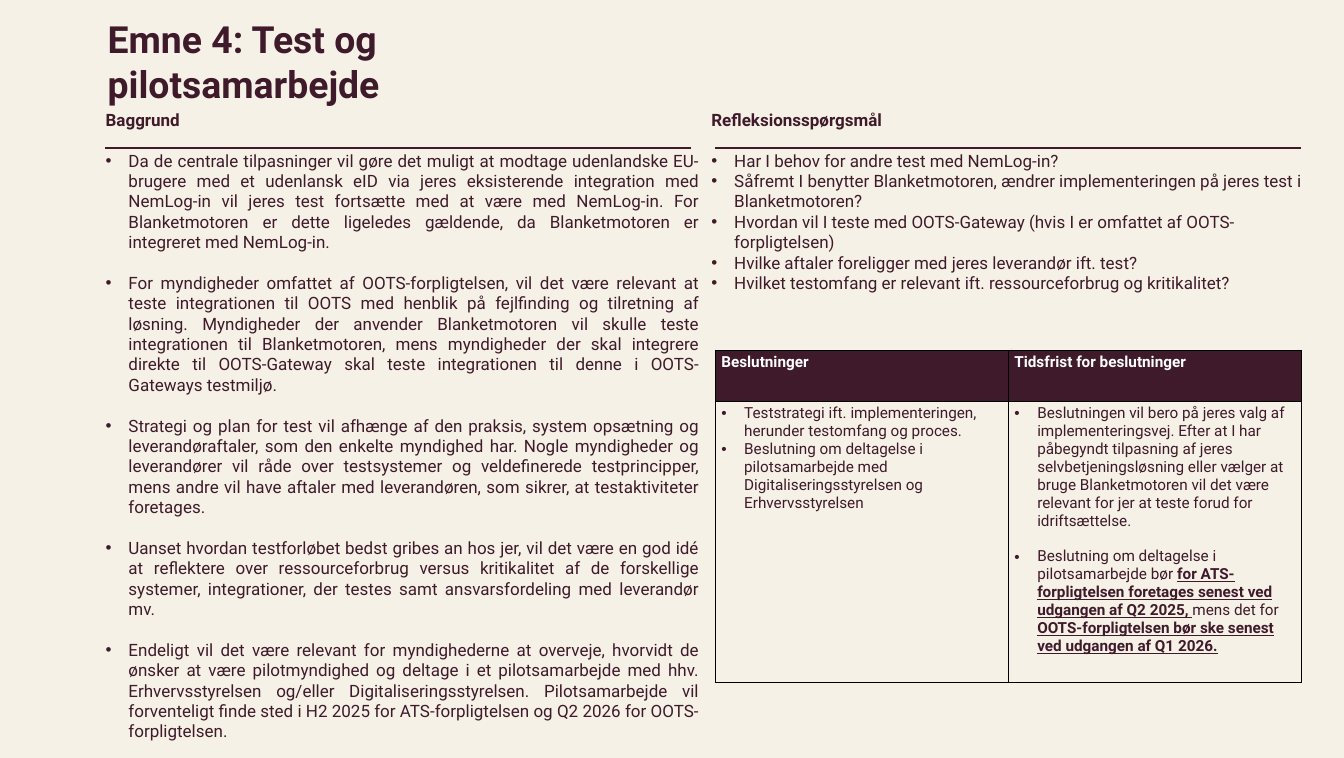
from lxml.etree import SubElement
from pptx import Presentation
from pptx.dml.color import RGBColor
from pptx.enum.shapes import MSO_CONNECTOR as Connector
from pptx.enum.text import MSO_ANCHOR as Anchor, MSO_AUTO_SIZE as AutoSize, PP_ALIGN as Align
from pptx.oxml.ns import qn
from pptx.util import Cm, Pt

COLORS = {"plum": "3F1A2B", "cream": "F5F1E6", "white": "FFFFFF", "black": "000000"}
TITLE = "Emne 4: Test og pilotsamarbejde"
BACKGROUND = [
    "Da de centrale tilpasninger vil gøre det muligt at modtage udenlandske EU-brugere med et udenlansk eID via jeres eksisterende integration med NemLog-in vil jeres test fortsætte med at være med NemLog-in. For Blanketmotoren er dette ligeledes gældende, da Blanketmotoren er integreret med NemLog-in.",
    "For myndigheder omfattet af OOTS-forpligtelsen, vil det være relevant at teste integrationen til OOTS med henblik på fejlfinding og tilretning af løsning. Myndigheder der anvender Blanketmotoren vil skulle teste integrationen til Blanketmotoren, mens myndigheder der skal integrere direkte til OOTS-Gateway skal teste integrationen til denne i OOTS-Gateways testmiljø.",
    "Strategi og plan for test vil afhænge af den praksis, system opsætning og leverandøraftaler, som den enkelte myndighed har. Nogle myndigheder og leverandører vil råde over testsystemer og veldefinerede testprincipper, mens andre vil have aftaler med leverandøren, som sikrer, at testaktiviteter foretages.",
    "Uanset hvordan testforløbet bedst gribes an hos jer, vil det være en god idé at reflektere over ressourceforbrug versus kritikalitet af de forskellige systemer, integrationer, der testes samt ansvarsfordeling med leverandør mv.",
    "Endeligt vil det være relevant for myndighederne at overveje, hvorvidt de ønsker at være pilotmyndighed og deltage i et pilotsamarbejde med hhv. Erhvervsstyrelsen og/eller Digitaliseringsstyrelsen. Pilotsamarbejde vil forventeligt finde sted i H2 2025 for ATS-forpligtelsen og Q2 2026 for OOTS-forpligtelsen.",
]
QUESTIONS = [
    "Har I behov for andre test med NemLog-in?",
    "Såfremt I benytter Blanketmotoren, ændrer implementeringen på jeres test i Blanketmotoren?",
    "Hvordan vil I teste med OOTS-Gateway (hvis I er omfattet af OOTS-forpligtelsen)",
    "Hvilke aftaler foreligger med jeres leverandør ift. test?",
    "Hvilket testomfang er relevant ift. ressourceforbrug og kritikalitet?",
]
HEADERS = ["Beslutninger", "Tidsfrist for beslutninger"]
DECISIONS = [
    "Teststrategi ift. implementeringen, herunder testomfang og proces.",
    "Beslutning om deltagelse i pilotsamarbejde med Digitaliseringsstyrelsen og Erhvervsstyrelsen",
]
DEADLINES = [
    "Beslutningen vil bero på jeres valg af implementeringsvej. Efter at I har påbegyndt tilpasning af jeres selvbetjeningsløsning eller vælger at bruge Blanketmotoren vil det være relevant for jer at teste forud for idriftsættelse.",
    [
        ("Beslutning om deltagelse i pilotsamarbejde bør ", False),
        ("for ATS-forpligtelsen foretages senest ved udgangen af Q2 2025, ", True),
        ("mens det for ", False),
        ("OOTS-forpligtelsen bør ske senest ved udgangen af Q1 2026.", True),
    ],
]


def rgb(name):
    return RGBColor.from_string(COLORS[name])


def assign(target, values):
    for key, value in values.items():
        setattr(target, key, value)


class Page:
    font = "Roboto"

    def __init__(self, deck):
        self.page = deck.slides.add_slide(deck.slide_layouts[5])
        self.page.background.fill.solid()
        self.page.background.fill.fore_color.rgb = rgb("cream")

    def span(self, para, text, size, color="plum", **style):
        span = para.add_run()
        span.text = text
        assign(span.font, {"name": self.font, "size": Pt(size), **style})
        span.font.color.rgb = rgb(color)

    def title(self, text, left, top, width, height):
        box = self.page.shapes.title
        assign(box, {"left": Cm(left), "top": Cm(top), "width": Cm(width), "height": Cm(height)})
        frame = box.text_frame
        assign(frame, {"word_wrap": True, "auto_size": AutoSize.NONE, "vertical_anchor": Anchor.TOP})
        frame.paragraphs[0].alignment = Align.LEFT
        self.span(frame.paragraphs[0], text, 44, bold=True)

    def bullets(self, paras, items, size, gap=0, align=Align.LEFT):
        for para, item in zip(paras, items):
            props = para._p.get_or_add_pPr()
            indent = Cm(0.95)
            props.set("marL", str(indent))
            props.set("indent", str(-indent))
            SubElement(props, qn("a:buFont")).set("typeface", "Arial")
            SubElement(props, qn("a:buChar")).set("char", "•")
            assign(para, {"alignment": align, "space_after": Pt(gap)})
            for text, strong in [(item, False)] if isinstance(item, str) else item:
                self.span(para, text, size, bold=strong, underline=strong)

    def section(self, heading, items, left, top, width, height, **layout):
        box = self.page.shapes.add_textbox(Cm(left), Cm(top), Cm(width), Cm(height))
        frame = box.text_frame
        frame.word_wrap = True
        para = frame.paragraphs[0]
        para.space_after = Pt(24)
        self.span(para, heading, 20, bold=True)
        self.bullets((frame.add_paragraph() for item in items), items, 20, **layout)

    def rule(self, left, top, width):
        line = self.page.shapes.add_connector(
            Connector.STRAIGHT, Cm(left), Cm(top), Cm(left + width), Cm(top))
        line.line.color.rgb = rgb("plum")
        line.line.width = Pt(1.25)
        SubElement(line._element.spPr, qn("a:effectLst"))

    def cell(self, cell, fill):
        props = cell._tc.get_or_add_tcPr()
        for side in ("a:lnL", "a:lnR", "a:lnT", "a:lnB"):
            edge = SubElement(props, qn(side))
            edge.set("w", str(Pt(1)))
            paint = SubElement(edge, qn("a:solidFill"))
            SubElement(paint, qn("a:srgbClr")).set("val", COLORS["black"])
        cell.fill.solid()
        cell.fill.fore_color.rgb = rgb(fill)
        return cell.text_frame

    def table(self, headers, columns, left, top, width, heights):
        table = self.page.shapes.add_table(
            2, len(headers), Cm(left), Cm(top), Cm(width), Cm(sum(heights))).table
        assign(table, {"first_row": False, "horz_banding": False})
        for row, height in zip(table.rows, heights):
            row.height = Cm(height)
        for index, (header, (items, gap)) in enumerate(zip(headers, columns)):
            head = self.cell(table.cell(0, index), "plum")
            self.span(head.paragraphs[0], header, 18, "white", bold=True)
            body = self.cell(table.cell(1, index), "cream")
            paras = [body.paragraphs[0]] + [body.add_paragraph() for item in items[1:]]
            self.bullets(paras[:-1], items[:-1], 18, gap)
            self.bullets(paras[-1:], items[-1:], 18)


def main():
    deck = Presentation()
    assign(deck, {"slide_width": Cm(55.85), "slide_height": Cm(31.5)})
    page = Page(deck)
    page.title(TITLE, 4.22, 0.56, 22.28, 3.9)
    page.section("Baggrund", BACKGROUND, 4.14, 4.42, 25.17, 26.6, gap=24, align=Align.JUSTIFY)
    page.section("Refleksionsspørgsmål", QUESTIONS, 29.31, 4.42, 25.17, 8)
    for left in (4.37, 29.72):
        page.rule(left, 6.15, 24.36)
    page.table(HEADERS, [(DECISIONS, 0), (DEADLINES, 21)], 29.72, 14.55, 24.36, (2.13, 11.69))
    deck.save("out.pptx")


if __name__ == "__main__":
    main()
